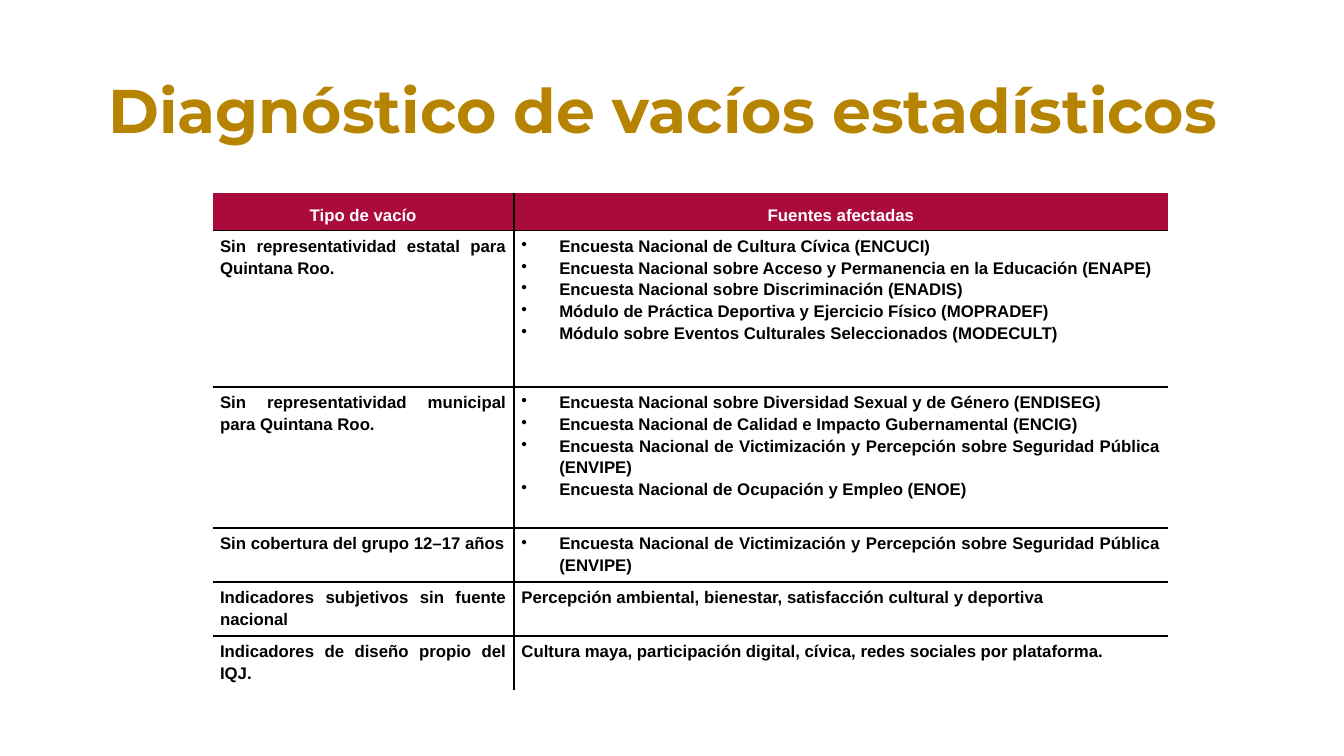
from dataclasses import dataclass

from lxml import etree
from pptx import Presentation
from pptx.dml.color import RGBColor
from pptx.enum.text import MSO_ANCHOR, PP_ALIGN
from pptx.oxml.ns import qn
from pptx.util import Pt

CENTER = PP_ALIGN.CENTER
JUSTIFY = PP_ALIGN.JUSTIFY
MIDDLE = MSO_ANCHOR.MIDDLE


@dataclass(frozen=True)
class Theme:
    """Colours, fonts and type sizes of the slide."""

    gold: str = "B68400"
    crimson: str = "AB0A3D"
    white: str = "FFFFFF"
    black: str = "000000"
    title_font: str = "Montserrat"
    table_font: str = "Arial"
    title_size: int = 44
    table_size: int = 12


THEME = Theme()
TITLE = "Diagnóstico de vacíos estadísticos "
HEADINGS = ("Tipo de vacío", "Fuentes afectadas")
GAPS = [
    ("Sin representatividad estatal para Quintana Roo.", [
        "Encuesta Nacional de Cultura Cívica (ENCUCI)",
        "Encuesta Nacional sobre Acceso y Permanencia en la Educación (ENAPE)",
        "Encuesta Nacional sobre Discriminación (ENADIS)",
        "Módulo de Práctica Deportiva y Ejercicio Físico (MOPRADEF)",
        "Módulo sobre Eventos Culturales Seleccionados (MODECULT)",
    ]),
    ("Sin representatividad municipal para Quintana Roo.", [
        "Encuesta Nacional sobre Diversidad Sexual y de Género (ENDISEG)",
        "Encuesta Nacional de Calidad e Impacto Gubernamental (ENCIG)",
        "Encuesta Nacional de Victimización y Percepción sobre Seguridad Pública (ENVIPE)",
        "Encuesta Nacional de Ocupación y Empleo (ENOE)",
    ]),
    ("Sin cobertura del grupo 12–17 años", [
        "Encuesta Nacional de Victimización y Percepción sobre Seguridad Pública (ENVIPE)",
    ]),
    ("Indicadores subjetivos sin fuente nacional",
     "Percepción ambiental, bienestar, satisfacción cultural y deportiva"),
    ("Indicadores de diseño propio del IQJ.",
     "Cultura maya, participación digital, cívica, redes sociales por plataforma."),
]
COLUMN_SHARES = (2.99 / 9.48, 6.49 / 9.48)
ROW_HEIGHTS = (18.6, 111.6, 100.8, 37.4, 37.4, 37.4)


def style_font(font, name, size, color):
    """Set a bold font with the given name, size and colour."""
    font.name = name
    font.size = Pt(size)
    font.bold = True
    font.color.rgb = RGBColor.from_string(color)


def add_bullet(paragraph):
    """Give a paragraph a black bullet and a hanging indent."""
    properties = paragraph._p.get_or_add_pPr()
    properties.set("marL", str(Pt(27)))
    properties.set("indent", str(-Pt(27)))
    bullet_color = etree.SubElement(properties, qn("a:buClr"))
    etree.SubElement(bullet_color, qn("a:srgbClr"), val=THEME.black)
    etree.SubElement(properties, qn("a:buChar"), char="•")


def set_borders(cell, visible):
    """Draw the named sides of a cell in black and hide the others."""
    properties = cell._tc.get_or_add_tcPr()
    for index, side in enumerate("LRTB"):
        line = etree.Element(qn(f"a:ln{side}"), w=str(Pt(1)))
        if side in visible:
            fill = etree.SubElement(line, qn("a:solidFill"))
            etree.SubElement(fill, qn("a:srgbClr"), val=THEME.black)
        else:
            etree.SubElement(line, qn("a:noFill"))
        properties.insert(index, line)


def fill_cell(cell, content, is_header):
    """Write plain text or a bulleted list into a table cell."""
    cell.margin_left = cell.margin_right = Pt(5.4)
    cell.margin_top = cell.margin_bottom = Pt(2.7)
    cell.fill.solid()
    cell.fill.fore_color.rgb = RGBColor.from_string(THEME.crimson if is_header else THEME.white)
    bulleted = isinstance(content, list)
    lines = content if bulleted else [content]
    cell.text = "\n".join(lines)
    for paragraph in cell.text_frame.paragraphs:
        if bulleted:
            add_bullet(paragraph)
        paragraph.alignment = CENTER if is_header else JUSTIFY
        paragraph.line_spacing = 1.5 if is_header else 1.15
        if is_header:
            paragraph.space_after = Pt(4)
        style_font(paragraph.font, THEME.table_font, THEME.table_size,
                   THEME.white if is_header else THEME.black)


def add_title(slide, left, top, width, height):
    """Place the centred title in the given box."""
    frame = slide.shapes.add_textbox(Pt(left), Pt(top), Pt(width), Pt(height)).text_frame
    frame.word_wrap = True
    frame.vertical_anchor = MIDDLE
    paragraph = frame.paragraphs[0]
    paragraph.text = TITLE
    paragraph.alignment = CENTER
    paragraph.line_spacing = 0.9
    style_font(paragraph.font, THEME.title_font, THEME.title_size, THEME.gold)


def add_gap_table(slide, left, top, width):
    """Place the table of gaps and affected sources, ruled on the inside only."""
    rows = [HEADINGS, *GAPS]
    last_row, last_column = len(rows) - 1, len(HEADINGS) - 1
    table = slide.shapes.add_table(len(rows), len(HEADINGS), Pt(left), Pt(top),
                                   Pt(width), Pt(sum(ROW_HEIGHTS))).table
    table.horz_banding = False
    for column, share in zip(table.columns, COLUMN_SHARES):
        column.width = Pt(width * share)
    for row_index, (contents, height) in enumerate(zip(rows, ROW_HEIGHTS)):
        table.rows[row_index].height = Pt(height)
        for column_index, content in enumerate(contents):
            cell = table.cell(row_index, column_index)
            fill_cell(cell, content, row_index == 0)
            inner = {"L": column_index > 0, "R": column_index < last_column,
                     "T": row_index > 0, "B": row_index < last_row}
            set_borders(cell, [side for side, shown in inner.items() if shown])


def main():
    """Build the slide and save it."""
    presentation = Presentation()
    presentation.slide_width = Pt(960)
    presentation.slide_height = Pt(540)
    slide = presentation.slides.add_slide(presentation.slide_layouts[6])
    add_title(slide, 66, 28.75, 828, 104.4)
    add_gap_table(slide, 151.8, 137.8, 682.6)
    presentation.save("out.pptx")


if __name__ == "__main__":
    main()
